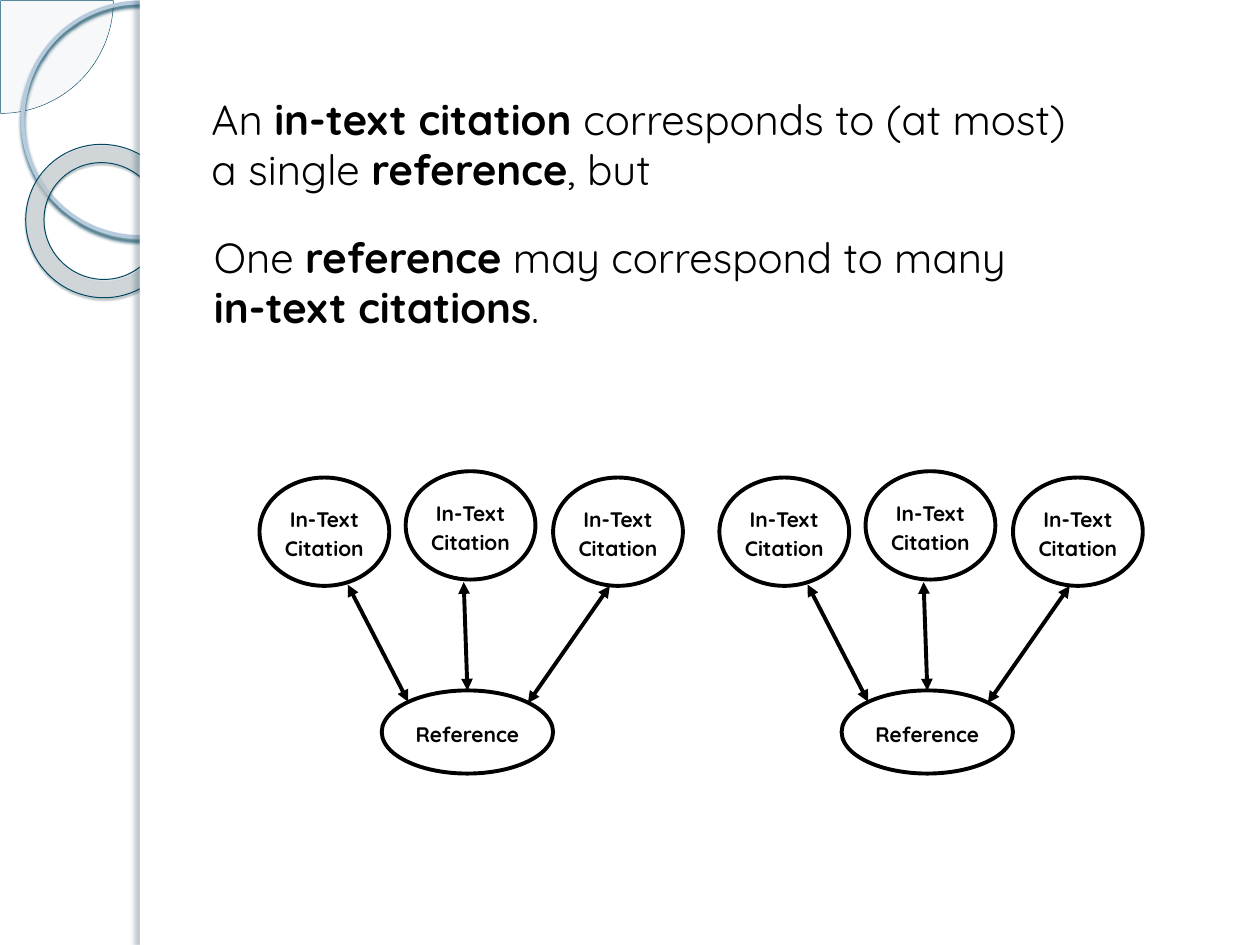
from dataclasses import dataclass
from typing import Optional

import lxml.etree
import pptx
import pptx.dml.color
import pptx.enum.shapes
import pptx.enum.text
import pptx.oxml.ns
import pptx.util

Inches = pptx.util.Inches
Pt = pptx.util.Pt
RGBColor = pptx.dml.color.RGBColor
Preset = pptx.enum.shapes.MSO_SHAPE
qn = pptx.oxml.ns.qn

BLACK = RGBColor(0x00, 0x00, 0x00)
WHITE = RGBColor(0xFF, 0xFF, 0xFF)
PIE_FILL = RGBColor(0xE8, 0xEC, 0xF0)
PIE_LINE = RGBColor(0x00, 0x4B, 0x67)
RING_LINE = RGBColor(0xB7, 0xCB, 0xDE)
RING_SHADOW = RGBColor(0x00, 0x41, 0x59)
DONUT_FILL = RGBColor(0xD5, 0xDA, 0xDD)
DONUT_LINE = RGBColor(0x00, 0x46, 0x60)
DONUT_SHADOW = RGBColor(0x00, 0x20, 0x2C)
EDGE_SHADOW = RGBColor(0x00, 0x2C, 0x3C)
FONT = "Quicksand"
GROUP_STEP = 3.65


@dataclass
class Shadow:
    color: RGBColor
    opacity: int
    blur: float
    distance: float
    angle: int


@dataclass
class Figure:
    preset: Preset
    left: float
    top: float
    width: float
    height: float
    fill: Optional[RGBColor] = None
    opacity: int = 100
    line: Optional[RGBColor] = None
    line_width: float = 0
    shadow: Optional[Shadow] = None
    adjustments: tuple[float, ...] = ()
    rotation: float = 0


@dataclass
class Span:
    text: str
    bold: bool = False


@dataclass
class Statement:
    left: float
    top: float
    height: float
    lines: list[list[Span]]


@dataclass
class Node:
    text: str
    left: float
    top: float
    width: float = 1.03
    height: float = 0.86


@dataclass
class Arrow:
    start: tuple[float, float]
    end: tuple[float, float]


DECORATION = [
    Figure(Preset.PIE, -0.89, -0.89, 1.79, 1.79, PIE_FILL, 33, PIE_LINE, 0.25,
           adjustments=(0, 54)),
    Figure(Preset.OVAL, 0.18, 0.02, 1.86, 1.86, line=RING_LINE, line_width=2.15,
           shadow=Shadow(RING_SHADOW, 85, 2, 2, 90)),
    Figure(Preset.DONUT, 0.2, 1.15, 1.23, 1.21, DONUT_FILL, 60, DONUT_LINE, 0.58,
           Shadow(DONUT_SHADOW, 35, 1, 1.2, 75), (0.12,), 38.6),
    Figure(Preset.RECTANGLE, 1.11, 0, 8.89, 7.5, WHITE),
    Figure(Preset.RECTANGLE, 1.11, 0, 0.08, 7.5, WHITE,
           shadow=Shadow(EDGE_SHADOW, 25, 3, 3, 180)),
]
STATEMENTS = [
    Statement(1.58, 0.28, 1.72, [
        [Span("An "), Span("in-text citation ", True), Span("corresponds to (at most) ")],
        [Span("a single "), Span("reference", True), Span(", but")],
    ]),
    Statement(1.6, 1.47, 1.53, [
        [Span("One "), Span("reference", True), Span(" may correspond to many ")],
        [Span("in-text citations", True), Span(".")],
    ]),
]
NODES = [
    Node("In-Text Citation", 2.06, 3.79),
    Node("In-Text Citation", 3.22, 3.74),
    Node("In-Text Citation", 4.39, 3.79),
    Node("Reference", 3.03, 5.48, 1.36, 0.66),
]
ARROWS = [
    Arrow((2.76, 4.64), (3.24, 5.57)),
    Arrow((3.68, 4.62), (3.71, 5.48)),
    Arrow((4.84, 4.65), (4.19, 5.58)),
]


def add_opacity(color_element, percent: int) -> None:
    lxml.etree.SubElement(color_element, qn("a:alpha"), val=str(percent * 1000))


def add_shadow(shape, shadow: Shadow) -> None:
    effects = shape.element.spPr.find(qn("a:effectLst"))
    outer = lxml.etree.SubElement(
        effects, qn("a:outerShdw"), blurRad=str(Pt(shadow.blur)),
        dist=str(Pt(shadow.distance)), dir=str(shadow.angle * 60000),
        algn="ctr", rotWithShape="0")
    color = lxml.etree.SubElement(outer, qn("a:srgbClr"), val=str(shadow.color))
    add_opacity(color, shadow.opacity)


def draw_figure(page, figure: Figure):
    shape = page.shapes.add_shape(
        figure.preset, Inches(figure.left), Inches(figure.top),
        Inches(figure.width), Inches(figure.height))
    for index, value in enumerate(figure.adjustments):
        shape.adjustments[index] = value
    shape.rotation = figure.rotation
    if figure.fill is None:
        shape.fill.background()
    else:
        shape.fill.solid()
        shape.fill.fore_color.rgb = figure.fill
        if figure.opacity < 100:
            add_opacity(next(shape.element.spPr.iter(qn("a:srgbClr"))), figure.opacity)
    if figure.line is None:
        shape.line.fill.background()
    else:
        shape.line.color.rgb = figure.line
        shape.line.width = Pt(figure.line_width)
    shape.shadow.inherit = False
    if figure.shadow:
        add_shadow(shape, figure.shadow)
    return shape


def style_font(font, size: float, bold: bool) -> None:
    font.name = FONT
    font.size = Pt(size)
    font.bold = bold
    font.color.rgb = BLACK


def draw_statement(page, statement: Statement) -> None:
    box = page.shapes.add_textbox(Inches(statement.left), Inches(statement.top),
                                  Inches(8.2), Inches(statement.height))
    box.text_frame.word_wrap = True
    box.text_frame.vertical_anchor = pptx.enum.text.MSO_ANCHOR.MIDDLE
    para = box.text_frame.paragraphs[0]
    for number, line in enumerate(statement.lines):
        if number:
            para.add_line_break()
        for span in line:
            run = para.add_run()
            run.text = span.text
            style_font(run.font, 24, span.bold)


def draw_node(page, node: Node, shift: float) -> None:
    shape = draw_figure(page, Figure(
        Preset.OVAL, node.left + shift, node.top, node.width, node.height,
        WHITE, line=BLACK, line_width=2.25))
    frame = shape.text_frame
    frame.margin_left = frame.margin_right = frame.margin_top = frame.margin_bottom = 0
    frame.word_wrap = True
    frame.vertical_anchor = pptx.enum.text.MSO_ANCHOR.MIDDLE
    frame.text = node.text
    para = frame.paragraphs[0]
    para.alignment = pptx.enum.text.PP_ALIGN.CENTER
    para.line_spacing = 1.15
    style_font(para.runs[0].font, 12, True)


def draw_arrow(page, arrow: Arrow, shift: float) -> None:
    connector = page.shapes.add_connector(
        pptx.enum.shapes.MSO_CONNECTOR.STRAIGHT,
        Inches(arrow.start[0] + shift), Inches(arrow.start[1]),
        Inches(arrow.end[0] + shift), Inches(arrow.end[1]))
    connector.line.color.rgb = BLACK
    connector.line.width = Pt(2.25)
    properties = connector.element.spPr
    for tag in ("a:headEnd", "a:tailEnd"):
        lxml.etree.SubElement(properties.find(qn("a:ln")), qn(tag), type="triangle")
    lxml.etree.SubElement(properties, qn("a:effectLst"))


def main() -> None:
    """Build the slide relating in-text citations to references."""
    deck = pptx.Presentation()
    deck.slide_width, deck.slide_height = Inches(10), Inches(7.5)
    page = deck.slides.add_slide(deck.slide_layouts[6])
    for figure in DECORATION:
        draw_figure(page, figure)
    for statement in STATEMENTS:
        draw_statement(page, statement)
    for shift in (0, GROUP_STEP):
        for node in NODES:
            draw_node(page, node, shift)
        for arrow in ARROWS:
            draw_arrow(page, arrow, shift)
    deck.save("out.pptx")


if __name__ == "__main__":
    main()
